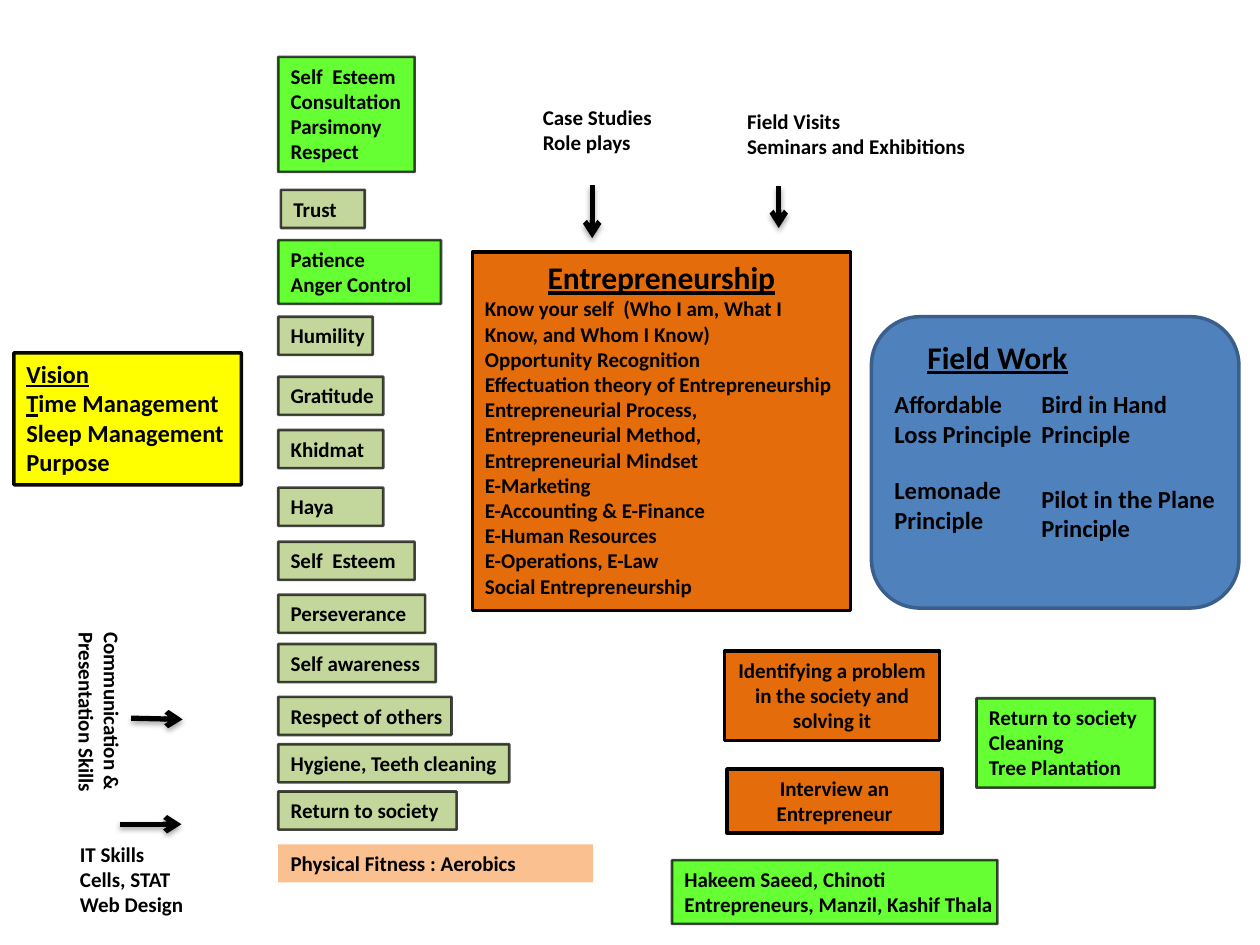
"""Builds a one-slide map of a character and entrepreneurship programme."""
from lxml import etree
from pptx import Presentation
from pptx import util as u
from pptx.dml import color
from pptx.enum import shapes, text
from pptx.oxml import ns

Pt = u.Pt
BLACK = "000000"
LEFT, CENTER = text.PP_ALIGN.LEFT, text.PP_ALIGN.CENTER

STYLES = {
    "value": {"fill": "C3D69B", "line": 1.5, "alpha": 72, "right": 0},
    "green": {"fill": "66FF33", "line": 1.5, "alpha": 72, "right": 0},
    "fitness": {"fill": "FAC090"},
    "vision": {"fill": "FFFF00", "line": 2, "alpha": 96, "size": 14},
    "topic": {"fill": "E46C0A", "line": 2, "head": 18},
    "task": {"fill": "E46C0A", "line": 2, "align": CENTER},
    "label": {},
    "loose": {"wrap": False},
    "turned": {"rotation": 90},
    "principle": {"size": 14},
    "heading": {"head": 18},
}

VALUE_LEFT = 159
VALUES = [
    ("green", 32.5, 78, ["Self  Esteem", "Consultation", "Parsimony", "Respect"]),
    ("green", 137.2, 93, ["Patience", "Anger Control"]),
    ("value", 181, 54, ["Humility"]),
    ("value", 215.3, 60, ["Gratitude"]),
    ("value", 245.7, 60, ["Khidmat"]),
    ("value", 278.7, 60, ["Haya"]),
    ("value", 309.6, 78, ["Self  Esteem"]),
    ("value", 339.9, 84, ["Perseverance"]),
    ("value", 368, 90, ["Self awareness"]),
    ("value", 398.2, 99, ["Respect of others"]),
    ("value", 425.3, 132, ["Hygiene, Teeth cleaning"]),
    ("value", 452.3, 102, ["Return to society"]),
    ("fitness", 482.5, 180, ["Physical Fitness : Aerobics"]),
]

# style, left, top, width, drawn lines, paragraphs; underscores mark underlining
BOXES = [
    ("value", 160.5, 108.5, 48, 1, ["Trust"]),
    ("loose", 419.8, 58.5, 141, 2, ["Field Visits", "Seminars and Exhibitions"]),
    ("loose", 303.1, 56.3, 77, 2, ["Case Studies", "Role plays"]),
    ("label", 38.6, 477.2, 93.6, 3, ["IT Skills", "Cells, STAT", "Web Design"]),
    ("turned", 3.3, 389.4, 106.6, 2, ["Communication &", "Presentation Skills"]),
    ("topic", 270, 144, 216, 13, [
        "_Entrepreneurship_",
        "Know your self  (Who I am, What I Know, and Whom I Know)",
        "Opportunity Recognition",
        "Effectuation theory of Entrepreneurship",
        "Entrepreneurial Process, Entrepreneurial Method, Entrepreneurial Mindset",
        "E-Marketing",
        "E-Accounting & E-Finance",
        "E-Human Resources",
        "E-Operations, E-Law",
        "Social Entrepreneurship",
    ]),
    ("vision", 8, 201.6, 130, 4,
     ["_Vision_", "_T_ime Management", "Sleep Management", "Purpose"]),
    ("heading", 522, 189.5, 96, 1, ["_Field Work_"]),
    ("principle", 504, 219, 96, 2, ["Affordable", "Loss Principle"]),
    ("principle", 588, 219, 90, 2, ["Bird in Hand Principle"]),
    ("principle", 504, 268, 90, 2, ["Lemonade Principle"]),
    ("principle", 588, 273, 114, 2, ["Pilot in the Plane Principle"]),
    ("task", 414, 372, 123, 3, ["Identifying a problem in the society and solving it"]),
    ("task", 415.4, 439.4, 123, 2, ["Interview an Entrepreneur"]),
    ("green", 558, 399, 102, 3, ["Return to society", "Cleaning", "Tree Plantation"]),
    ("green", 384, 491.5, 186, 2,
     ["Hakeem Saeed, Chinoti Entrepreneurs, Manzil, Kashif Thala"]),
]

ARROWS = [
    (74.9, 410.4, 104.4, 411.1),
    (68.4, 471, 103.7, 471),
    (445, 106.5, 445, 130.3),
    (338.4, 105.8, 338.4, 136.1),
]


def rgb(value):
    return color.RGBColor.from_string(value)


def child(parent, tag, **attrs):
    return etree.SubElement(parent, ns.qn(tag), {k: str(v) for k, v in attrs.items()})


def set_all(obj, values):
    for name, value in values.items():
        setattr(obj, name, value)


def paint(s, fill=None, line=None, width=0, alpha=100):
    s.shadow.inherit = False
    if fill:
        s.fill.solid()
        s.fill.fore_color.rgb = rgb(fill)
    if not line:
        s.line.fill.background()
        return
    s.line.color.rgb = rgb(line)
    s.line.width = Pt(width)
    if alpha < 100:
        clr = s.line._get_or_add_ln().find(".//" + ns.qn("a:srgbClr"))
        child(clr, "a:alpha", val=alpha * 1000)


def write(tf, lines, style):
    size, head = style.get("size", 12), style.get("head")
    set_all(tf, {
        "word_wrap": style.get("wrap", True),
        "auto_size": text.MSO_AUTO_SIZE.SHAPE_TO_FIT_TEXT,
        "vertical_anchor": text.MSO_ANCHOR.TOP,
        "margin_left": Pt(7.2), "margin_right": Pt(style.get("right", 7.2)),
        "margin_top": Pt(3.6), "margin_bottom": Pt(3.6),
    })
    for i, line in enumerate(lines):
        p = tf.paragraphs[0] if i == 0 else tf.add_paragraph()
        is_head = bool(head) and i == 0
        p.alignment = CENTER if is_head else style.get("align", LEFT)
        for j, part in enumerate(line.split("_")):
            if part:
                r = p.add_run()
                r.text = part
                set_all(r.font, {"name": "Calibri", "bold": True, "underline": j % 2 == 1,
                                 "size": Pt(head if is_head else size)})
                r.font.color.rgb = rgb(BLACK)


def add_box(tree, kind, left, top, width, count, lines):
    style = STYLES[kind]
    size = style.get("size", 12)
    height = 7.2 + 1.22 * (style.get("head", size) + (count - 1) * size)
    frame = [Pt(v) for v in (left, top, width, height)]
    if "fill" in style:
        s = tree.add_shape(shapes.MSO_SHAPE.RECTANGLE, *frame)
        width = style.get("line", 0)
        paint(s, style["fill"], BLACK if width else None, width, style.get("alpha", 100))
    else:
        s = tree.add_textbox(*frame)
    s.rotation = style.get("rotation", 0)
    write(s.text_frame, lines, style)


def add_arrow(tree, ends):
    s = tree.add_connector(shapes.MSO_CONNECTOR.STRAIGHT, *[Pt(v) for v in ends])
    s.line.color.rgb = rgb(BLACK)
    s.line.width = Pt(3)
    child(s.line._get_or_add_ln(), "a:tailEnd", type="arrow")
    effects = child(s._element.spPr, "a:effectLst")
    shadow = child(effects, "a:outerShdw", blurRad=Pt(3.1), dist=Pt(1.8),
                   dir=5400000, rotWithShape=0)
    child(child(shadow, "a:srgbClr", val=BLACK), "a:alpha", val=35000)


def main():
    prs = Presentation()
    set_all(prs, {"slide_width": Pt(720), "slide_height": Pt(540)})
    tree = prs.slides.add_slide(prs.slide_layouts[6]).shapes
    panel = tree.add_shape(shapes.MSO_SHAPE.ROUNDED_RECTANGLE,
                           Pt(498), Pt(181), Pt(210), Pt(166.5))
    paint(panel, "4F81BD", "3A5F8C", 2)
    for ends in ARROWS:
        add_arrow(tree, ends)
    for kind, top, width, lines in VALUES:
        add_box(tree, kind, VALUE_LEFT, top, width, len(lines), lines)
    for box in BOXES:
        add_box(tree, *box)
    prs.save("out.pptx")


if __name__ == "__main__":
    main()
